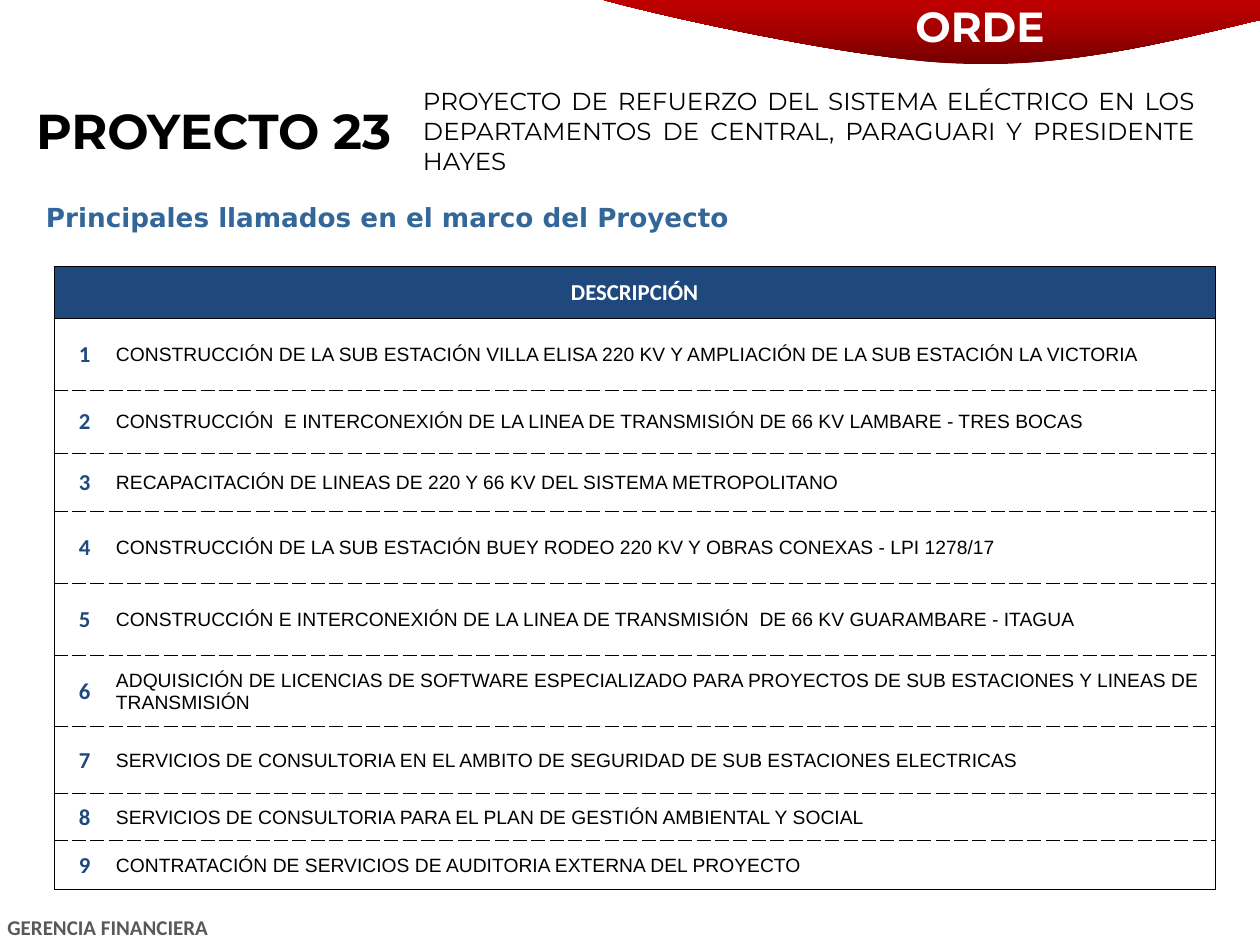
from copy import deepcopy
from dataclasses import dataclass

from lxml.etree import SubElement
from pptx import Presentation
from pptx.dml.color import RGBColor as RGB
from pptx.enum.text import MSO_ANCHOR as ANCHOR, MSO_AUTO_SIZE as AUTO, PP_ALIGN as ALIGN
from pptx.oxml.ns import qn
from pptx.util import Pt

SCALE = 914400 / 126
NO_STYLE = "{2D5ABB26-0587-4C30-8999-92F81FD0307C}"
CALLS = [
    (72, "CONSTRUCCIÓN DE LA SUB ESTACIÓN VILLA ELISA 220 KV Y AMPLIACIÓN DE LA SUB ESTACIÓN LA VICTORIA"),
    (63, "CONSTRUCCIÓN  E INTERCONEXIÓN DE LA LINEA DE TRANSMISIÓN DE 66 KV LAMBARE - TRES BOCAS"),
    (58, "RECAPACITACIÓN DE LINEAS DE 220 Y 66 KV DEL SISTEMA METROPOLITANO"),
    (72, "CONSTRUCCIÓN DE LA SUB ESTACIÓN BUEY RODEO 220 KV Y OBRAS CONEXAS - LPI 1278/17"),
    (73, "CONSTRUCCIÓN E INTERCONEXIÓN DE LA LINEA DE TRANSMISIÓN  DE 66 KV GUARAMBARE - ITAGUA"),
    (71, "ADQUISICIÓN DE LICENCIAS DE SOFTWARE ESPECIALIZADO PARA PROYECTOS DE SUB ESTACIONES Y LINEAS DE TRANSMISIÓN"),
    (67, "SERVICIOS DE CONSULTORIA EN EL AMBITO DE SEGURIDAD DE SUB ESTACIONES ELECTRICAS"),
    (47, "SERVICIOS DE CONSULTORIA PARA EL PLAN DE GESTIÓN AMBIENTAL Y SOCIAL"),
    (49, "CONTRATACIÓN DE SERVICIOS DE AUDITORIA EXTERNA DEL PROYECTO"),
]


@dataclass(frozen=True)
class Theme:
    black: str = "000000"
    white: str = "FFFFFF"
    navy: str = "1F497D"
    blue: str = "336699"
    grey: str = "595959"
    reds: tuple = ("720000", "A20000", "C00000")
    display: str = "Montserrat"
    heading: str = "DejaVu Sans"
    label: str = "Calibri"
    body: str = "Arial"
    project: int = 28
    brand: int = 24
    title: int = 15
    summary: int = 14
    number: int = 13
    footer: int = 12
    item: int = 11


def px(n):
    return round(n * SCALE)


def write(tf, text, *, font, size, color, bold=False, align=ALIGN.LEFT):
    p = tf.paragraphs[0]
    p.alignment = align
    r = p.add_run()
    r.text = text
    r.font.name, r.font.size, r.font.bold = font, Pt(size), bold
    r.font.color.rgb = RGB.from_string(color)


def bezier(a, b, c, d, steps=24):
    for i in range(1, steps + 1):
        t = i / steps
        u = 1 - t
        yield tuple(px(u**3 * m + 3 * u * u * t * n + 3 * u * t * t * o + t**3 * q)
                    for m, n, o, q in zip(a, b, c, d))


class Deck:
    """Builds slide elements in one theme from pixel lengths."""

    def __init__(self, theme):
        self.theme = theme
        self.prs = Presentation()
        self.prs.slide_width, self.prs.slide_height = px(1260), px(945)
        self.s = self.prs.slides.add_slide(self.prs.slide_layouts[5])

    def banner(self, start, curves, corner):
        builder = self.s.shapes.build_freeform(px(start[0]), px(start[1]))
        points = []
        for c1, c2, end in curves:
            points += bezier(start, c1, c2, end)
            start = end
        builder.add_line_segments(points + [tuple(map(px, corner))])
        sp = builder.convert_to_shape()
        sp.shadow.inherit = False
        sp.line.fill.background()
        sp.fill.gradient()
        sp.fill.gradient_angle = 90
        stops = next(sp._element.spPr.iter(qn("a:gsLst")))
        stops.insert(1, deepcopy(stops[0]))
        for stop, color, position in zip(sp.fill.gradient_stops, self.theme.reds, (0, 0.5, 1)):
            stop.color.rgb = RGB.from_string(color)
            stop.position = position

    def title(self, text, box, **style):
        sp = self.s.shapes.title
        sp.left, sp.top, sp.width, sp.height = map(px, box)
        tf = sp.text_frame
        tf.auto_size, tf.vertical_anchor, tf.margin_left = AUTO.NONE, ANCHOR.TOP, px(21)
        write(tf, text, **style)

    def text(self, text, box, **style):
        tf = self.s.shapes.add_textbox(*map(px, box)).text_frame
        tf.word_wrap = True
        write(tf, text, **style)

    def table(self, left, top, widths, heights):
        frame = self.s.shapes.add_table(len(heights), len(widths), px(left), px(top),
                                        px(sum(widths)), px(sum(heights)))
        table = frame.table
        table.first_row = table.horz_banding = False
        table._tbl.tblPr.find(qn("a:tableStyleId")).text = NO_STYLE
        for col, width in zip(table.columns, widths):
            col.width = px(width)
        for row, height in zip(table.rows, heights):
            row.height = px(height)
        return table

    def cell(self, cell, text="", fill=None, borders=None, **style):
        cell.vertical_anchor = ANCHOR.MIDDLE
        cell.margin_left = cell.margin_top = cell.margin_right = px(1)
        cell.margin_bottom = 0
        for side, (color, width, dash) in (borders or {}).items():
            ln = SubElement(cell._tc.get_or_add_tcPr(), qn(f"a:ln{side}"), w=str(Pt(width)))
            solid = SubElement(ln, qn("a:solidFill"))
            SubElement(solid, qn("a:srgbClr"), val=color)
            SubElement(ln, qn("a:prstDash"), val=dash)
        if fill:
            cell.fill.solid()
            cell.fill.fore_color.rgb = RGB.from_string(fill)
        else:
            cell.fill.background()
        if text:
            write(cell.text_frame, text, **style)


def add_project(deck):
    th = deck.theme
    name, summary = deck.table(5, 86, (417, 774), (90,)).rows[0].cells
    edge = (th.white, 1, "solid")
    deck.cell(name, "PROYECTO 23", font=th.display, size=th.project,
              color=th.black, bold=True, align=ALIGN.CENTER)
    deck.cell(summary, "PROYECTO DE REFUERZO DEL SISTEMA ELÉCTRICO EN LOS DEPARTAMENTOS "
              "DE CENTRAL, PARAGUARI Y PRESIDENTE HAYES", borders=dict.fromkeys("RTB", edge),
              font=th.display, size=th.summary, color=th.black, align=ALIGN.JUSTIFY)


def add_calls(deck):
    th = deck.theme
    solid, dash = (th.black, 0.5, "solid"), (th.black, 0.5, "dash")
    label = dict(font=th.label, size=th.number, bold=True, align=ALIGN.CENTER)
    table = deck.table(54, 266, (61, 1100), [52] + [height for height, _ in CALLS])
    head, tail = table.rows[0].cells
    head.merge(tail)
    frame = dict.fromkeys("LRTB", solid)
    deck.cell(head, "DESCRIPCIÓN", fill=th.navy, borders=frame, color=th.white, **label)
    deck.cell(tail, fill=th.navy, borders=frame)
    for i, (_, text) in enumerate(CALLS, 1):
        number, item = table.rows[i].cells
        rules = {"T": solid if i == 1 else dash, "B": solid if i == len(CALLS) else dash}
        deck.cell(number, str(i), borders={"L": solid, **rules}, color=th.navy, **label)
        deck.cell(item, text, borders={"R": solid, **rules},
                  font=th.body, size=th.item, color=th.black)


def main():
    th = Theme()
    deck = Deck(th)
    deck.banner((604, 0), [((641, 11), (859, 62), (969, 64)),
                           ((1079, 68), (1211, 31), (1260, 20))], (1260, 0))
    deck.text("ORDE", (898, -6, 164, 63), font=th.display, size=th.brand,
              color=th.white, bold=True, align=ALIGN.CENTER)
    deck.text("GERENCIA FINANCIERA", (-5, 908, 436, 37), font=th.label, size=th.footer,
              color=th.grey, bold=True)
    deck.title("Principales llamados en el marco del Proyecto", (25, 195, 1221, 44),
               font=th.heading, size=th.title, color=th.blue, bold=True, align=ALIGN.JUSTIFY)
    add_project(deck)
    add_calls(deck)
    deck.prs.save("out.pptx")


if __name__ == "__main__":
    main()
